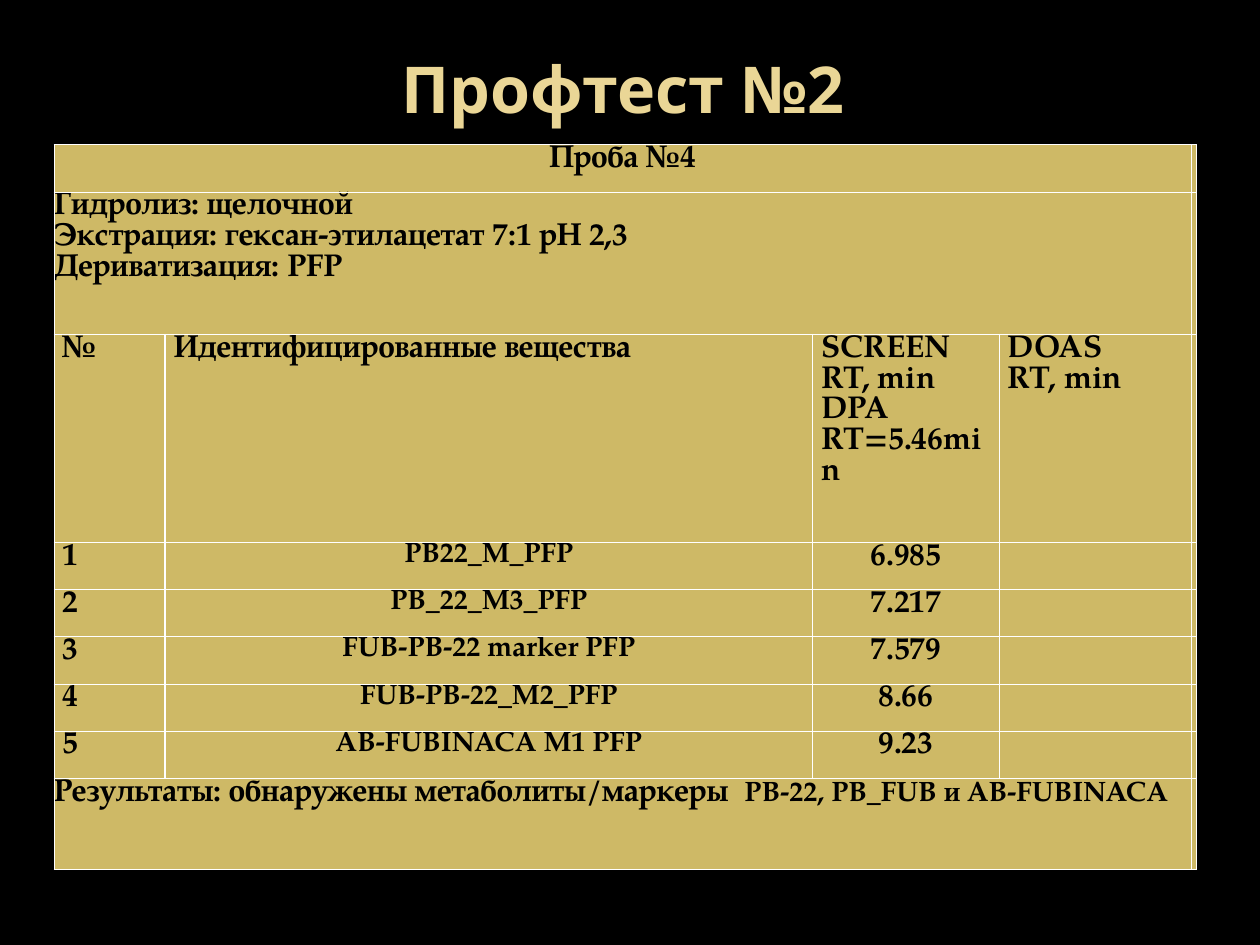
"""Build a slide with the results table of proficiency test sample 4."""
from dataclasses import dataclass

from lxml import etree
from pptx import Presentation
from pptx.dml.color import RGBColor
from pptx.enum.text import MSO_ANCHOR, PP_ALIGN
from pptx.oxml.ns import qn
from pptx.util import Inches, Pt

BLACK = RGBColor(0x00, 0x00, 0x00)
WHITE = RGBColor(0xFF, 0xFF, 0xFF)
GOLD = RGBColor(0xCE, 0xB9, 0x66)
CREAM = RGBColor(0xEA, 0xD6, 0x96)
LEFT, CENTER = PP_ALIGN.LEFT, PP_ALIGN.CENTER
MIDDLE = MSO_ANCHOR.MIDDLE
BODY_FONT, TITLE_FONT = "TeX Gyre Pagella", "Open Sans"
TABLE_HEIGHT = 5.75
COLUMNS = [0.88, 5.14, 1.48, 1.53, 0.04]
CONDITIONS_HEIGHT, HEADING_HEIGHT, RESULT_HEIGHT = 1.13, 1.65, 0.72
LINE_HEIGHT = (TABLE_HEIGHT - CONDITIONS_HEIGHT - HEADING_HEIGHT - RESULT_HEIGHT) / 6
ROWS = [LINE_HEIGHT, CONDITIONS_HEIGHT, HEADING_HEIGHT, *[LINE_HEIGHT] * 5, RESULT_HEIGHT]
PADDING = 0.07


@dataclass
class Substance:
    name: str
    retention: str


SUBSTANCES = [
    Substance("PB22_M_PFP", "6.985"),
    Substance("PB_22_M3_PFP", "7.217"),
    Substance("FUB-PB-22 marker PFP", "7.579"),
    Substance("FUB-PB-22_M2_PFP", "8.66"),
    Substance("AB-FUBINACA M1 PFP", "9.23"),
]
HEADINGS = ["№", "Идентифицированные вещества",
            "SCREEN\nRT, min DPA RT=5.46min", "DOAS\nRT, min"]
CONDITIONS = ("Гидролиз: щелочной\nЭкстрация: гексан-этилацетат 7:1 рН 2,3\n"
              "Дериватизация: PFP")


def add_span(para, text: str, *, size: float = 18, font: str = BODY_FONT,
             color: RGBColor = BLACK) -> None:
    span = para.add_run()
    span.text = text
    span.font.size = Pt(size)
    span.font.name = font
    span.font.bold = True
    span.font.color.rgb = color


def write(frame, text: str, *, align=LEFT, **style) -> None:
    for index, line in enumerate(text.split("\n")):
        para = frame.add_paragraph() if index else frame.paragraphs[0]
        para.alignment = align
        para.line_spacing = 1.0
        add_span(para, line, **style)


def style_cell(cell) -> None:
    cell.margin_left = cell.margin_right = 0
    cell.margin_top = cell.margin_bottom = 0
    cell.text_frame.paragraphs[0].font.size = Pt(16)
    properties = cell._tc.get_or_add_tcPr()
    for side in ("a:lnL", "a:lnR", "a:lnT", "a:lnB"):
        line = etree.SubElement(properties, qn(side), w=str(Pt(0.75)))
        fill = etree.SubElement(line, qn("a:solidFill"))
        etree.SubElement(fill, qn("a:srgbClr"), val=str(WHITE))
    cell.fill.solid()
    cell.fill.fore_color.rgb = GOLD


def fill_cell(cell, text: str, *, padding: float = PADDING, **style) -> None:
    cell.margin_left = cell.margin_right = Inches(padding)
    write(cell.text_frame, text, **style)


def add_title(page, text: str) -> None:
    title = page.shapes.title
    title.left, title.top = Inches(0.43), Inches(0.36)
    title.width, title.height = Inches(9.03), Inches(0.68)
    title.text_frame.vertical_anchor = MIDDLE
    write(title.text_frame, text, align=CENTER,
          size=36.9, font=TITLE_FONT, color=CREAM)


def add_results(page) -> None:
    table = page.shapes.add_table(
        len(ROWS), len(COLUMNS), Inches(0.43), Inches(1.15),
        Inches(sum(COLUMNS)), Inches(TABLE_HEIGHT)).table
    table.first_row = table.horz_banding = False
    for column, width in zip(table.columns, COLUMNS):
        column.width = Inches(width)
    for row, height in zip(table.rows, ROWS):
        row.height = Inches(height)
    for cell in table.iter_cells():
        style_cell(cell)
    last = len(ROWS) - 1
    for row in (0, 1, last):
        table.cell(row, 0).merge(table.cell(row, 3))
    fill_cell(table.cell(0, 0), "Проба №4", padding=0, align=CENTER)
    fill_cell(table.cell(1, 0), CONDITIONS, padding=0)
    for column, heading in enumerate(HEADINGS):
        fill_cell(table.cell(2, column), heading)
    for number, substance in enumerate(SUBSTANCES, start=1):
        row = number + 2
        fill_cell(table.cell(row, 0), str(number))
        fill_cell(table.cell(row, 1), substance.name, align=CENTER, size=16)
        fill_cell(table.cell(row, 2), substance.retention, align=CENTER)
    result = table.cell(last, 0)
    fill_cell(result, "Результаты: обнаружены метаболиты/маркеры  ", padding=0)
    add_span(result.text_frame.paragraphs[0], "PB-22, PB_FUB и AB-FUBINACA", size=16)


def main() -> None:
    deck = Presentation()
    deck.slide_width, deck.slide_height = Inches(10), Inches(7.5)
    page = deck.slides.add_slide(deck.slide_layouts[5])
    page.background.fill.solid()
    page.background.fill.fore_color.rgb = BLACK
    add_title(page, "Профтест №2")
    add_results(page)
    deck.save("out.pptx")


if __name__ == "__main__":
    main()
